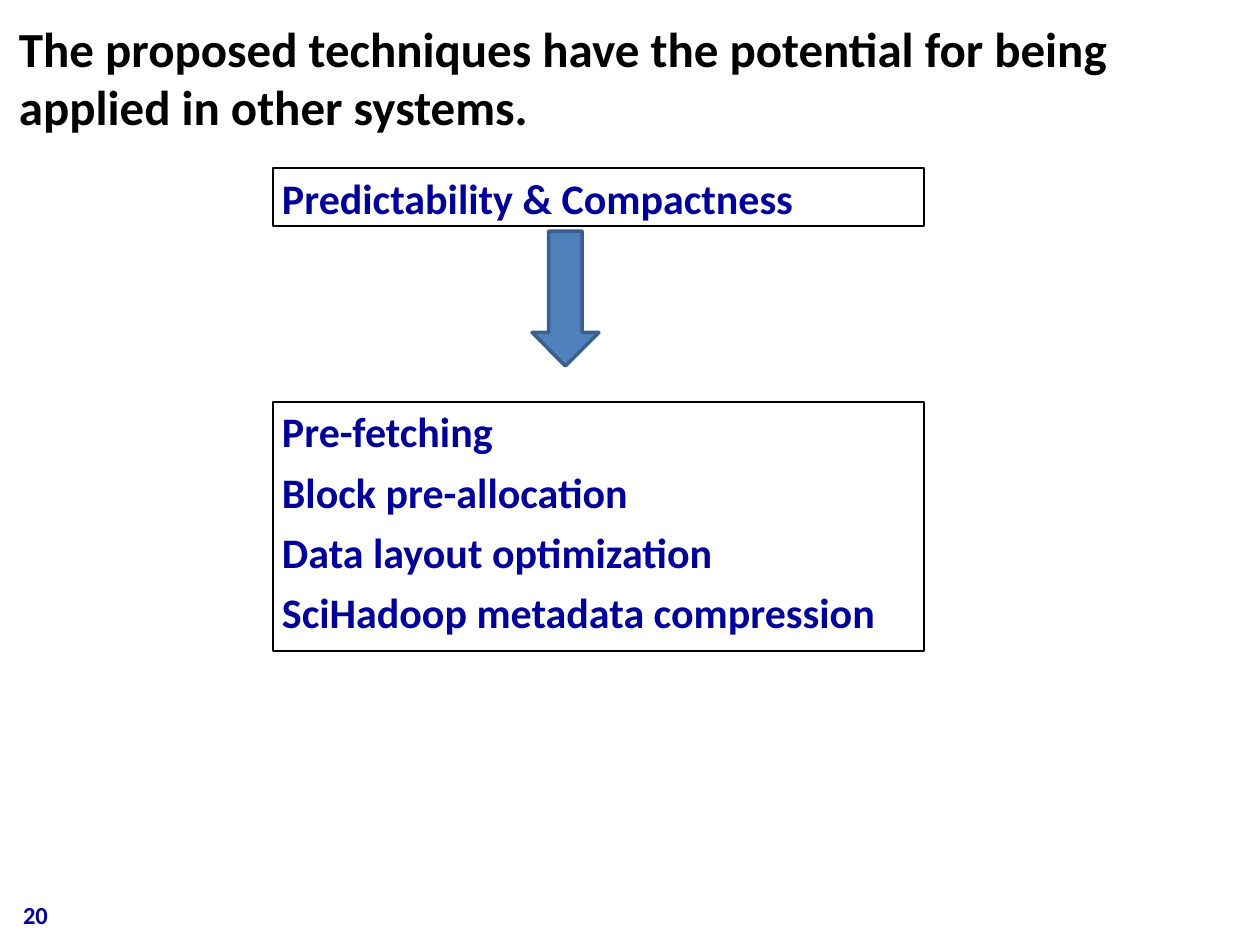
from dataclasses import dataclass

from pptx import Presentation
from pptx.dml.color import RGBColor
from pptx.enum.shapes import MSO_SHAPE
from pptx.enum.text import MSO_ANCHOR, MSO_AUTO_SIZE, PP_ALIGN
from pptx.shapes.autoshape import Shape
from pptx.slide import Slide
from pptx.util import Emu, Pt

EMU_PER_PX = 914400 / 126
COLORS = {
    "title": "000000",
    "text": "000099",
    "border": "000000",
    "arrow": "4F81BD",
    "arrow_edge": "3A5F8C",
}


@dataclass(frozen=True)
class Area:
    left: int
    top: int
    width: int
    height: int

    def emu(self) -> tuple[Emu, Emu, Emu, Emu]:
        return px(self.left), px(self.top), px(self.width), px(self.height)


@dataclass(frozen=True)
class TextPanel:
    area: Area
    lines: tuple[str, ...]


TITLE_AREA = Area(10, 14, 1184, 126)
NUMBER_AREA = Area(10, 885, 294, 50)
ARROW_AREA = Area(532, 231, 67, 135)
PANELS = (
    TextPanel(Area(273, 168, 651, 58), ("Predictability & Compactness",)),
    TextPanel(
        Area(273, 402, 651, 249),
        (
            "Pre-fetching",
            "Block pre-allocation",
            "Data layout optimization",
            "SciHadoop metadata compression",
        ),
    ),
)


def px(length: int) -> Emu:
    return Emu(round(length * EMU_PER_PX))


def color(name: str) -> RGBColor:
    return RGBColor.from_string(COLORS[name])


def write_text(box: Shape, lines: tuple[str, ...], size: int, color_name: str,
               anchor: MSO_ANCHOR = MSO_ANCHOR.TOP,
               inset_x: int = 9, inset_y: int = 4) -> None:
    frame = box.text_frame
    frame.text = "\n".join(lines)
    frame.word_wrap = True
    frame.auto_size = MSO_AUTO_SIZE.NONE
    frame.vertical_anchor = anchor
    frame.margin_left = frame.margin_right = px(inset_x)
    frame.margin_top = frame.margin_bottom = px(inset_y)
    for index, para in enumerate(frame.paragraphs):
        para.alignment = PP_ALIGN.LEFT
        para.space_before = Pt(5.5 if index else 0)
        for span in para.runs:
            span.font.name = "Calibri"
            span.font.size = Pt(size)
            span.font.bold = True
            span.font.color.rgb = color(color_name)


def add_title(page: Slide) -> None:
    title = page.shapes.title
    title.left, title.top, title.width, title.height = TITLE_AREA.emu()
    write_text(
        title,
        ("The proposed techniques have the potential for being applied in other systems.",),
        28, "title",
    )


def add_panel(page: Slide, panel: TextPanel) -> None:
    box = page.shapes.add_shape(MSO_SHAPE.RECTANGLE, *panel.area.emu())
    box.shadow.inherit = False
    box.fill.background()
    box.line.color.rgb = color("border")
    box.line.width = Pt(1)
    write_text(box, panel.lines, 24, "text")


def add_arrow(page: Slide) -> None:
    arrow = page.shapes.add_shape(MSO_SHAPE.DOWN_ARROW, *ARROW_AREA.emu())
    arrow.shadow.inherit = False
    arrow.fill.solid()
    arrow.fill.fore_color.rgb = color("arrow")
    arrow.line.color.rgb = color("arrow_edge")
    arrow.line.width = Pt(2)


def add_page_number(page: Slide) -> None:
    box = page.shapes.add_textbox(*NUMBER_AREA.emu())
    write_text(box, ("20",), 14, "text", MSO_ANCHOR.BOTTOM, 13, 6)


def main() -> None:
    deck = Presentation()
    deck.slide_width, deck.slide_height = px(1260), px(945)
    page = deck.slides.add_slide(deck.slide_layouts[5])
    add_title(page)
    for panel in PANELS:
        add_panel(page, panel)
    add_arrow(page)
    add_page_number(page)
    deck.save("out.pptx")


if __name__ == "__main__":
    main()
